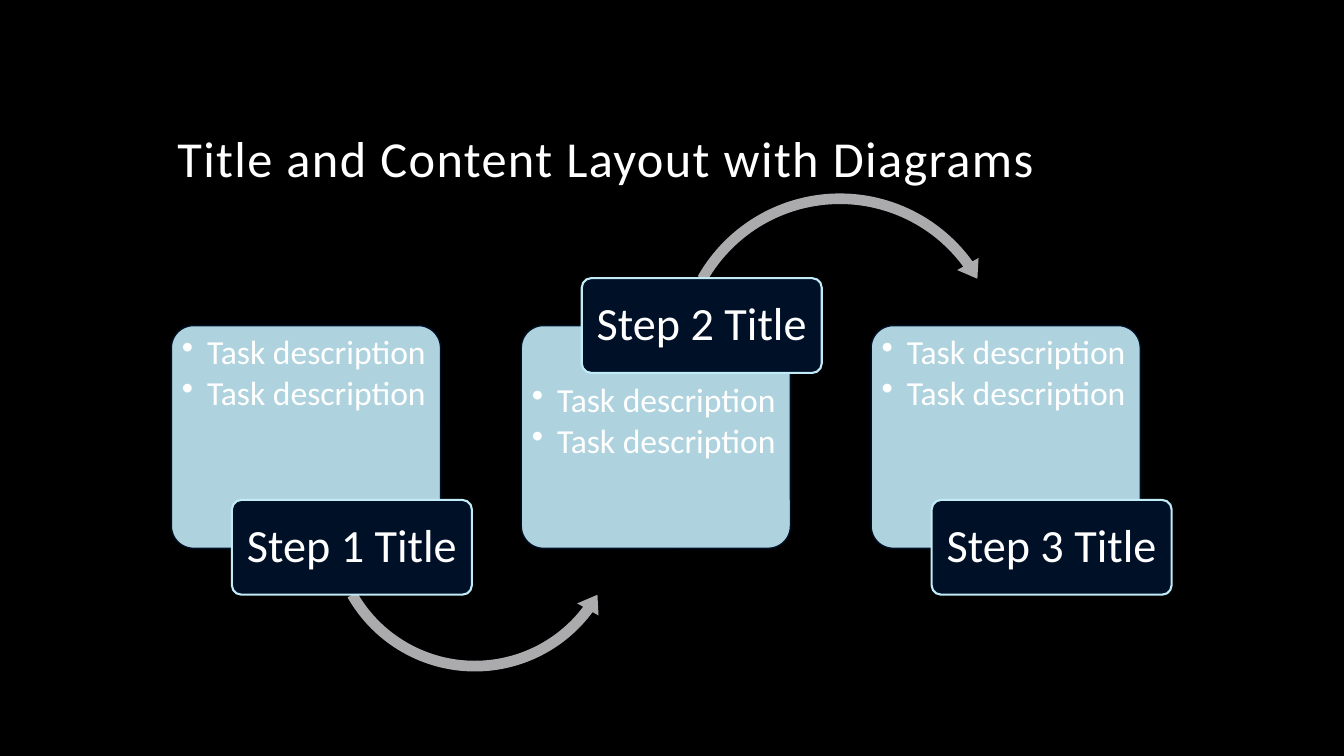
from lxml import etree
from pptx import Presentation
from pptx.dml.color import RGBColor
from pptx.enum.shapes import MSO_SHAPE
from pptx.enum.text import MSO_ANCHOR, MSO_AUTO_SIZE, PP_ALIGN
from pptx.oxml.ns import qn
from pptx.util import Inches, Pt

ROUNDED = MSO_SHAPE.ROUNDED_RECTANGLE
ARROW_UNDER = MSO_SHAPE.LEFT_CIRCULAR_ARROW
ARROW_OVER = MSO_SHAPE.CIRCULAR_ARROW
TOP, MIDDLE, BOTTOM = MSO_ANCHOR.TOP, MSO_ANCHOR.MIDDLE, MSO_ANCHOR.BOTTOM
LEFT, CENTER = PP_ALIGN.LEFT, PP_ALIGN.CENTER
NO_AUTOFIT = MSO_AUTO_SIZE.NONE

COLORS = {
    "background": "000000",
    "text": "FFFFFF",
    "panel": "C1EBF7",
    "label": "001027",
    "arrow": "ABABAD",
}
FONT = "Calibri"
TITLE_ONLY = 5

FIRST_LEFT, STEP_PITCH = 1.7, 3.47
PANEL_TOP, PANEL_WIDTH, PANEL_HEIGHT = 3.23, 2.67, 2.21
LABEL_OFFSET, LABEL_WIDTH, LABEL_HEIGHT = 0.6, 2.38, 0.94
LABEL_LOW, LABEL_HIGH = 4.96, 2.76
TASKS = ["Task description", "Task description"]

STEPS = [
    {"label_top": LABEL_LOW, "text_top": 0.03,
     "arrow": (ARROW_UNDER, 3.19, 3.69, 3.04,
               (0.035, 4.277, 22.032, 90.245, 0.04))},
    {"label_top": LABEL_HIGH, "text_top": 0.51,
     "arrow": (ARROW_OVER, 6.64, 1.85, 3.38,
               (0.031, 3.813, 194.431, 125.755, 0.036))},
    {"label_top": LABEL_LOW, "text_top": 0.03, "arrow": None},
]


def color(name):
    return RGBColor.from_string(COLORS[name])


def write_text(frame, lines, size, anchor=TOP, align=LEFT, margins=None,
               bullet=False, space_after=0, spacing=0):
    frame.word_wrap = True
    frame.auto_size = NO_AUTOFIT
    frame.vertical_anchor = anchor
    if margins:
        (frame.margin_left, frame.margin_top,
         frame.margin_right, frame.margin_bottom) = map(Inches, margins)
    for index, line in enumerate(lines):
        paragraph = frame.add_paragraph() if index else frame.paragraphs[0]
        paragraph.alignment = align
        paragraph.line_spacing = 0.9
        paragraph.space_before = Pt(0)
        paragraph.space_after = Pt(space_after)
        if bullet:
            properties = paragraph._p.get_or_add_pPr()
            properties.set("marL", str(Inches(0.25)))
            properties.set("indent", str(Inches(-0.25)))
            etree.SubElement(properties, qn("a:buChar")).set("char", "•")
        run = paragraph.add_run()
        run.text = line
        run.font.name = FONT
        run.font.size = Pt(size)
        run.font.color.rgb = color("text")
        if spacing:
            run._r.get_or_add_rPr().set("spc", str(spacing * 100))


class SlideBuilder:
    def __init__(self, slide):
        self.slide = slide
        slide.background.fill.solid()
        slide.background.fill.fore_color.rgb = color("background")

    def title(self, text):
        shape = self.slide.shapes.title
        shape.left, shape.top = Inches(1.66), Inches(0.42)
        shape.width, shape.height = Inches(10), Inches(1.5)
        write_text(shape.text_frame, [text], 36, anchor=BOTTOM, spacing=1)

    def shape(self, kind, left, top, width, height, fill, adjustments,
              line=None, line_width=1, opacity=100):
        shape = self.slide.shapes.add_shape(
            kind, Inches(left), Inches(top), Inches(width), Inches(height))
        shape.shadow.inherit = False
        for index, value in enumerate(adjustments):
            shape.adjustments[index] = value
        shape.fill.solid()
        shape.fill.fore_color.rgb = color(fill)
        if opacity < 100:
            fill_color = shape.fill._xPr.find(qn("a:solidFill"))[0]
            alpha = etree.SubElement(fill_color, qn("a:alpha"))
            alpha.set("val", str(opacity * 1000))
        if line:
            shape.line.color.rgb = color(line)
            shape.line.width = Pt(line_width)
        else:
            shape.line.fill.background()
        return shape

    def panel(self, left, tasks, text_top):
        panel = self.shape(ROUNDED, left, PANEL_TOP, PANEL_WIDTH, PANEL_HEIGHT,
                           "panel", [0.1], line="label", opacity=90)
        write_text(panel.text_frame, tasks, 24, bullet=True, space_after=3.6,
                   margins=(0.04, text_top, 0.02, 0.03))

    def arrow(self, kind, left, top, size, adjustments):
        self.shape(kind, left, top, size, size, "arrow", adjustments)

    def label(self, left, top, text):
        label = self.shape(ROUNDED, left, top, LABEL_WIDTH, LABEL_HEIGHT,
                           "label", [0.1], line="panel", line_width=1.5)
        write_text(label.text_frame, [text], 33, anchor=MIDDLE, align=CENTER,
                   margins=(0.1, 0.08, 0.1, 0.08))


def main():
    presentation = Presentation()
    presentation.slide_width = Inches(13.33)
    presentation.slide_height = Inches(7.5)
    layout = presentation.slide_layouts[TITLE_ONLY]
    builder = SlideBuilder(presentation.slides.add_slide(layout))
    builder.title("Title and Content Layout with Diagrams")
    for index, step in enumerate(STEPS):
        left = FIRST_LEFT + index * STEP_PITCH
        builder.panel(left, TASKS, step["text_top"])
        if step["arrow"]:
            builder.arrow(*step["arrow"])
        builder.label(left + LABEL_OFFSET, step["label_top"],
                      f"Step {index + 1} Title")
    presentation.save("out.pptx")


if __name__ == "__main__":
    main()
